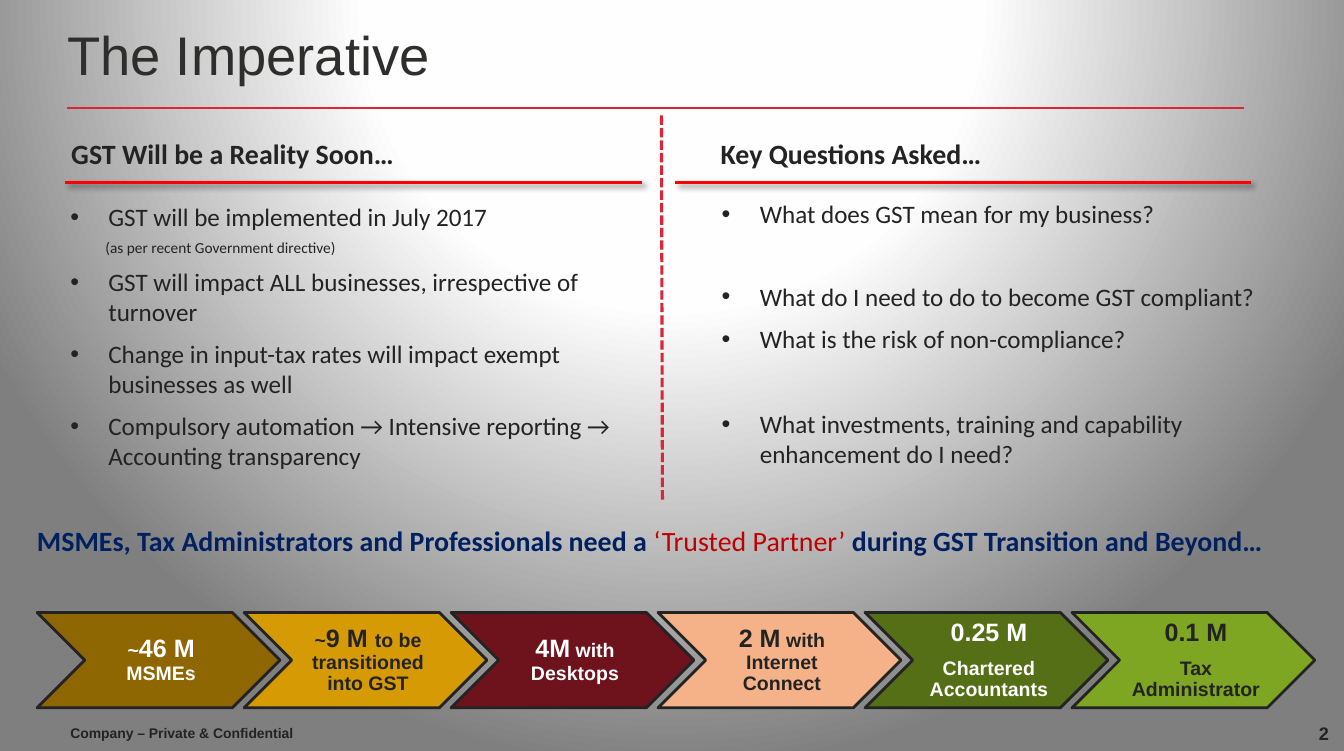
"""Build the slide "The Imperative" on the coming GST and the people it affects."""
from dataclasses import dataclass

from lxml import etree
from pptx import Presentation
from pptx.dml.color import RGBColor
from pptx.enum.dml import MSO_LINE
from pptx.enum.shapes import MSO_CONNECTOR, MSO_SHAPE
from pptx.enum.text import MSO_ANCHOR, MSO_AUTO_SIZE, PP_ALIGN
from pptx.oxml import parse_xml
from pptx.oxml.ns import nsdecls, qn
from pptx.util import Inches, Pt

TOP, MIDDLE = MSO_ANCHOR.TOP, MSO_ANCHOR.MIDDLE
LEFT, CENTER, RIGHT = PP_ALIGN.LEFT, PP_ALIGN.CENTER, PP_ALIGN.RIGHT
STRAIGHT, CHEVRON = MSO_CONNECTOR.STRAIGHT, MSO_SHAPE.CHEVRON
DASHED, NO_AUTOFIT = MSO_LINE.SQUARE_DOT, MSO_AUTO_SIZE.NONE


@dataclass(frozen=True)
class Theme:
    heading_font: str = "Arial"
    body_font: str = "Calibri"
    ink: str = "232323"
    title_ink: str = "2E2E2D"
    white: str = "FFFFFF"
    crimson: str = "DB2539"
    red: str = "FF0000"
    navy: str = "002060"
    accent: str = "C00000"
    title_size: int = 39
    heading_size: int = 20
    body_size: int = 18
    label_size: int = 14
    number_size: int = 13
    note_size: int = 11
    footer_size: int = 10


theme = Theme()


def write(paragraph, font_name, *pieces):
    """Add runs given as (text, size, colour, bold)."""
    for text, size, colour, bold in pieces:
        run = paragraph.add_run()
        run.text = text
        run.font.name = font_name
        run.font.size = Pt(size)
        run.font.bold = bold
        run.font.color.rgb = RGBColor.from_string(colour)


def set_box(shape, box, insets=(0.1, 0.05, 0.1, 0.05), anchor=TOP, align=LEFT):
    """Place a text shape, set up its frame and return its first paragraph."""
    shape.left, shape.top, shape.width, shape.height = map(Inches, box)
    frame = shape.text_frame
    frame.word_wrap = True
    frame.auto_size = NO_AUTOFIT
    frame.vertical_anchor = anchor
    (frame.margin_left, frame.margin_top,
     frame.margin_right, frame.margin_bottom) = map(Inches, insets)
    paragraph = frame.paragraphs[0]
    paragraph.alignment = align
    paragraph.space_before = Pt(0)
    return paragraph


prs = Presentation()
prs.slide_width, prs.slide_height = Inches(13.39), Inches(7.48)
slide = prs.slides.add_slide(prs.slide_layouts.get_by_name("Comparison"))
shapes = slide.shapes

slide.background.fill.solid()
backdrop = slide.element.find(".//" + qn("p:bgPr"))
backdrop.replace(backdrop[0], parse_xml(
    f'<a:gradFill {nsdecls("a")} rotWithShape="1"><a:gsLst>'
    '<a:gs pos="0"><a:srgbClr val="FFFFFF"/></a:gs>'
    '<a:gs pos="40000"><a:srgbClr val="FEFEFE"/></a:gs>'
    '<a:gs pos="100000"><a:srgbClr val="7F7F7F"/></a:gs></a:gsLst>'
    '<a:path path="circle"><a:fillToRect l="50000" t="-80000" r="50000" b="180000"/>'
    '</a:path></a:gradFill>'))

rules = [
    ((0.67, 1.08, 12.39, 1.08), theme.crimson, 1.5, False, False),
    ((6.59, 1.15, 6.6, 5), theme.crimson, 2.25, True, False),
    ((0.65, 1.82, 6.4, 1.82), theme.red, 2.25, False, True),
    ((6.73, 1.82, 12.46, 1.82), theme.red, 2.25, False, True),
]
for ends, colour, weight, dashed, shadowed in rules:
    rule = shapes.add_connector(STRAIGHT, *map(Inches, ends))
    rule.line.color.rgb = RGBColor.from_string(colour)
    rule.line.width = Pt(weight)
    if dashed:
        rule.line.dash_style = DASHED
    effects = etree.SubElement(rule.element.spPr, qn("a:effectLst"))
    if shadowed:
        effects.append(parse_xml(
            f'<a:outerShdw {nsdecls("a")} blurRad="50800" dist="38100" dir="2700000">'
            '<a:srgbClr val="000000"><a:alpha val="40000"/></a:srgbClr></a:outerShdw>'))

title = set_box(shapes.title, (0.67, 0.03, 11.71, 1.02), (0, 0.06, 0, 0.06), MIDDLE)
write(title, theme.heading_font,
      ("The Imperative", theme.title_size, theme.title_ink, False))

columns = [
    (1, "GST Will be a Reality Soon…", (0.61, 1.31, 5.59, 0.44),
     2, (0.6, 1.96, 5.8, 2.8), [
         ("GST will be implemented in July 2017", 0, True),
         ("(as per recent Government directive)", 4.5, False),
         ("GST will impact ALL businesses, irrespective of turnover", 7, True),
         ("Change in input-tax rates will impact exempt businesses as well", 8.5, True),
         ("Compulsory automation → Intensive reporting → Accounting transparency",
          8.5, True)]),
    (3, "Key Questions Asked…", (7.08, 1.31, 5.08, 0.44),
     4, (7.09, 1.93, 5.96, 2.8), [
         ("What does GST mean for my business?", 0, True),
         ("What do I need to do to become GST compliant?", 37.5, True),
         ("What is the risk of non-compliance?", 9, True),
         ("What investments, training and capability enhancement do I need?",
          39, True)]),
]
for heading_idx, heading, heading_box, list_idx, list_box, points in columns:
    write(set_box(slide.placeholders[heading_idx], heading_box), theme.body_font,
          (heading, theme.heading_size, theme.ink, True))
    point_list = slide.placeholders[list_idx]
    paragraph = set_box(point_list, list_box)
    for position, (text, gap, bulleted) in enumerate(points):
        if position:
            paragraph = point_list.text_frame.add_paragraph()
        properties = paragraph._p.get_or_add_pPr()
        if bulleted:
            properties.set("marL", str(Inches(0.38)))
            properties.set("indent", str(Inches(-0.38)))
            etree.SubElement(properties, qn("a:buChar")).set("char", "•")
        else:
            properties.set("marL", str(Inches(0.35)))
            properties.set("indent", "0")
            etree.SubElement(properties, qn("a:buNone"))
        paragraph.space_before = Pt(gap)
        size = theme.body_size if bulleted else theme.note_size
        write(paragraph, theme.body_font, (text, size, theme.ink, False))

message = set_box(shapes.add_textbox(0, 0, 0, 0), (0.27, 5.17, 12.93, 0.77))
write(message, theme.body_font,
      ("MSMEs, Tax Administrators and Professionals need a ",
       theme.heading_size, theme.navy, True),
      ("‘Trusted Partner’ ", theme.heading_size, theme.accent, False),
      ("during GST Transition and Beyond…", theme.heading_size, theme.navy, True))

big, small = theme.body_size, theme.label_size
audiences = [
    ("8E6703", theme.white, [[("~", small), ("46 M ", big), ("MSMEs", small)]]),
    ("D69A04", theme.ink,
     [[("~", small), ("9 M ", big), ("to be transitioned into GST", small)]]),
    ("6E121C", theme.white, [[("4M", big), (" with Desktops", small)]]),
    ("F5B289", theme.ink, [[("2 M", big), (" with Internet Connect", small)]]),
    ("546F16", theme.white, [[("0.25 M", big)], [("Chartered Accountants", small)]]),
    ("7EA622", theme.ink, [[("0.1 M", big)], [("Tax Administrator", small)]]),
]
first_left, last_left = 0.37, 10.68
step = (last_left - first_left) / (len(audiences) - 1)
for position, (fill, ink, lines) in enumerate(audiences):
    audience = shapes.add_shape(CHEVRON, 0, 0, 0, 0)
    paragraph = set_box(audience, (first_left + position * step, 6.1, 2.42, 0.95),
                        (0.07, 0.02, 0.02, 0.02), MIDDLE, CENTER)
    audience.shadow.inherit = False
    audience.fill.solid()
    audience.fill.fore_color.rgb = RGBColor.from_string(fill)
    audience.line.color.rgb = RGBColor.from_string(theme.ink)
    audience.line.width = Pt(2)
    for line_number, pieces in enumerate(lines):
        if line_number:
            paragraph = audience.text_frame.add_paragraph()
            paragraph.alignment = CENTER
            paragraph.space_before = Pt(8)
        paragraph.line_spacing = 0.9
        write(paragraph, theme.heading_font,
              *[(text, size, ink, True) for text, size in pieces])

footers = [
    ("Company – Private & Confidential", (0.57, 7.16, 8.38, 0.3),
     theme.footer_size, TOP, LEFT),
    ("2", (12.19, 7.13, 1.18, 0.35), theme.number_size, MIDDLE, RIGHT),
]
for text, box, size, anchor, align in footers:
    footer = set_box(shapes.add_textbox(0, 0, 0, 0), box,
                     (0.13, 0.06, 0.13, 0.06), anchor, align)
    write(footer, theme.heading_font, (text, size, theme.ink, True))

prs.save("out.pptx")
